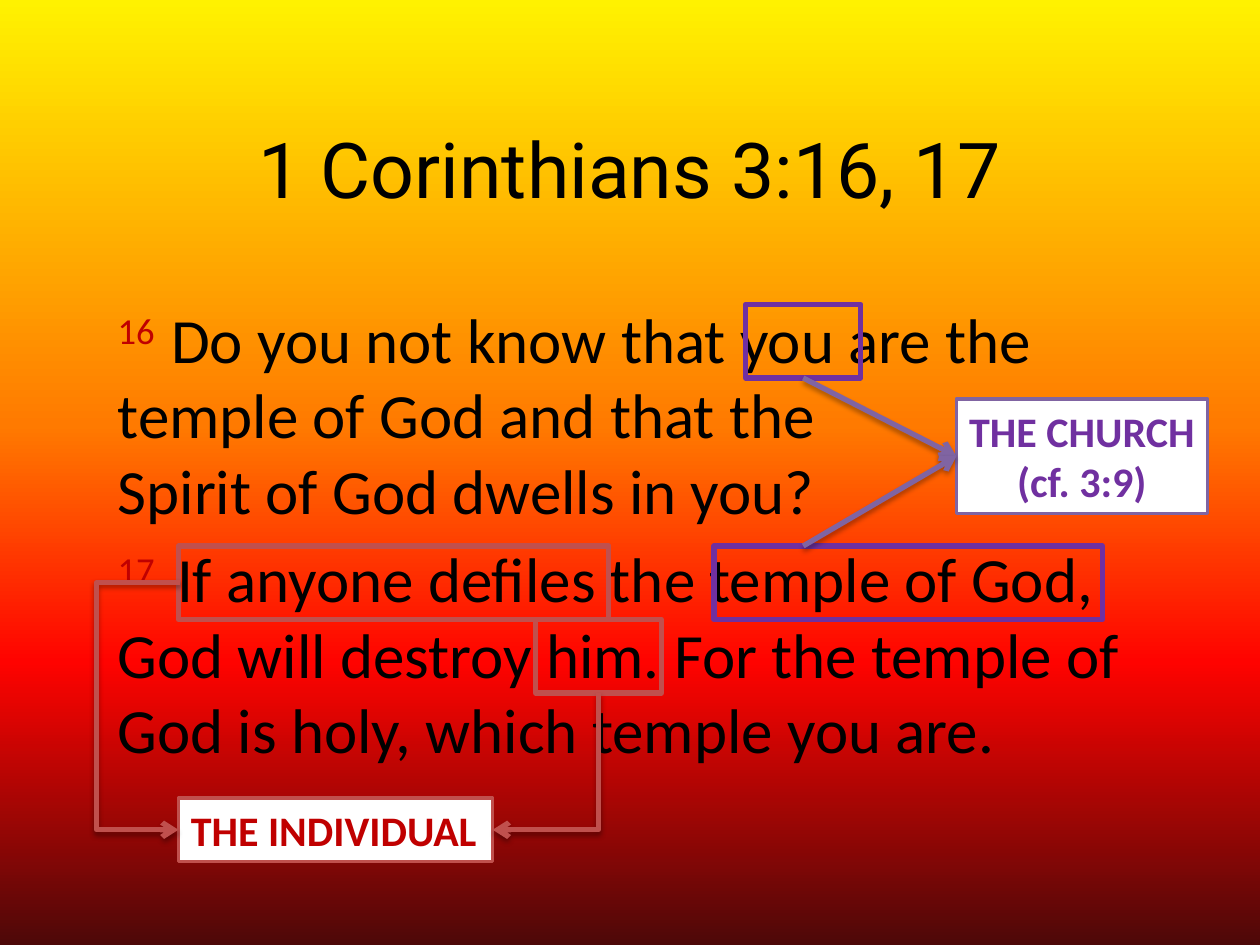
from lxml import etree
from pptx import Presentation
from pptx.dml.color import RGBColor
from pptx.enum.shapes import MSO_CONNECTOR as LINK, MSO_SHAPE
from pptx.enum.text import MSO_ANCHOR, MSO_AUTO_SIZE, PP_ALIGN
from pptx.oxml import parse_xml
from pptx.oxml.ns import nsdecls, qn
from pptx.util import Pt

BLACK = RGBColor(0x00, 0x00, 0x00)
WHITE = RGBColor(0xFF, 0xFF, 0xFF)
RED = RGBColor(0xC0, 0x00, 0x00)
BRICK = RGBColor(0xC0, 0x50, 0x4D)
PURPLE = RGBColor(0x70, 0x30, 0xA0)
LILAC = RGBColor(0x80, 0x64, 0xA2)
SKY = [(0, RGBColor(0xFF, 0xF2, 0x00)), (45, RGBColor(0xFF, 0x7A, 0x00)),
       (70, RGBColor(0xFF, 0x03, 0x00)), (100, RGBColor(0x4D, 0x08, 0x08))]

REFERENCE = "1 Corinthians 3:16, 17"
VERSES = [
    ("16  ", "Do you not know that you are the temple of God and that the \n"
             "Spirit of God dwells in you?"),
    ("17 ", " If anyone defiles the temple of God, God will destroy him. "
            "For the temple of God is holy, which temple you are."),
]
HIGHLIGHTS = {
    "you": (426, 174, 66, 42, PURPLE),
    "anyone": (102, 312, 246, 42, BRICK),
    "temple": (408, 312, 222, 42, PURPLE),
    "him": (306, 354, 72, 42, BRICK),
}
MEANINGS = {
    "church": ("THE CHURCH\n(cf. 3:9)", (546.5, 228, 143.5, 65.5), LILAC, PURPLE, PP_ALIGN.CENTER),
    "individual": ("THE INDIVIDUAL", (102, 456, 179.5, 36.3), BRICK, RED, PP_ALIGN.LEFT),
}
DETOUR_X = 54.7


def set_font(font, **values):
    color = values.pop("color")
    for name, value in values.items():
        setattr(font, name, value)
    font.color.rgb = color


def add_box(slide, left, top, width, height, color, weight):
    box = slide.shapes.add_shape(MSO_SHAPE.RECTANGLE, Pt(left), Pt(top), Pt(width), Pt(height))
    box.shadow.inherit = False
    box.fill.background()
    box.line.color.rgb = color
    box.line.width = Pt(weight)
    return box


def add_arrow(slide, kind, start, end, color):
    arrow = slide.shapes.add_connector(kind, *(Pt(value) for value in (*start, *end)))
    arrow.line.color.rgb = color
    arrow.line.width = Pt(3)
    etree.SubElement(arrow.line._get_or_add_ln(), qn("a:tailEnd"), type="arrow")
    arrow._element.spPr.append(parse_xml(
        f'<a:effectLst {nsdecls("a")}><a:outerShdw blurRad="{Pt(3.1)}" dist="{Pt(1.8)}" '
        'dir="5400000" rotWithShape="0"><a:srgbClr val="000000"><a:alpha val="35000"/>'
        '</a:srgbClr></a:outerShdw></a:effectLst>'))
    return arrow


def paint_background(slide):
    fill = slide.background.fill
    fill.gradient()
    gradient = slide.background._cSld.find(".//" + qn("a:gradFill"))
    stops = "".join(f'<a:gs pos="{pos * 1000}"><a:srgbClr val="{color}"/></a:gs>'
                    for pos, color in SKY)
    gradient.replace(gradient.find(qn("a:gsLst")),
                     parse_xml(f'<a:gsLst {nsdecls("a")}>{stops}</a:gsLst>'))
    gradient.find(qn("a:lin")).set("ang", "5400000")


def place(holder, left, top, width, height):
    holder.left, holder.top, holder.width, holder.height = map(Pt, (left, top, width, height))
    holder.text_frame.auto_size = MSO_AUTO_SIZE.NONE
    holder.text_frame.word_wrap = True


def write_verses(frame):
    for index, (number, words) in enumerate(VERSES):
        verse = frame.add_paragraph() if index else frame.paragraphs[0]
        props = verse._p.get_or_add_pPr()
        props.set("marL", "0")
        props.set("indent", "0")
        etree.SubElement(props, qn("a:buNone"))
        verse.space_before = Pt(7.2 if index else 0)
        mark = verse.add_run()
        mark.text = number
        set_font(mark.font, name="Calibri", size=Pt(36), color=RED)
        mark._r.get_or_add_rPr().set("baseline", "30000")
        for row, line in enumerate(words.split("\n")):
            if row:
                verse.add_line_break()
            run = verse.add_run()
            run.text = line
            set_font(run.font, name="Calibri", size=Pt(36), color=BLACK)


def add_meaning(slide, words, area, edge, ink, align):
    box = add_box(slide, *area, edge, 2)
    box.fill.solid()
    box.fill.fore_color.rgb = WHITE
    frame = box.text_frame
    frame.word_wrap = False
    frame.auto_size = MSO_AUTO_SIZE.SHAPE_TO_FIT_TEXT
    frame.vertical_anchor = MSO_ANCHOR.TOP
    label = frame.paragraphs[0]
    label.text = words
    label.alignment = align
    for run in label.runs:
        set_font(run.font, name="Calibri", size=Pt(24), bold=True, color=ink)
    return box


def add_church_arrows(slide, boxes):
    left, top, width, height = MEANINGS["church"][1]
    target = (left, top + height / 2)
    x, y, w, h, _ = HIGHLIGHTS["you"]
    middle = x + w / 2
    for start, source in [((middle, y + h), boxes["you"]),
                          ((middle, HIGHLIGHTS["temple"][1]), None)]:
        arrow = add_arrow(slide, LINK.STRAIGHT, start, target, LILAC)
        if source is not None:
            arrow.begin_connect(source, 2)
        arrow.end_connect(boxes["church"], 1)


def add_individual_arrows(slide):
    left, top, width, height = MEANINGS["individual"][1]
    end_y = top + height / 2
    x, y, w, h, _ = HIGHLIGHTS["anyone"]
    around = add_arrow(slide, LINK.ELBOW, (x + 1, y + h / 2), (left, end_y), BRICK)
    guides = around._element.spPr.find(qn("a:prstGeom")).get_or_add_avLst()
    bend = round((x + 1 - DETOUR_X) / (x + 1 - left) * 100000)
    etree.SubElement(guides, qn("a:gd"), name="adj1", fmla=f"val {bend}")

    x, y, w, h, _ = HIGHLIGHTS["him"]
    start_x, start_y, end_x = x + w / 2, y + h, left + width
    drop, run = end_y - start_y, start_x - end_x
    turn_x = (start_x + end_x - drop) / 2
    turn_y = (start_y + end_y - run) / 2
    down = add_arrow(slide, LINK.ELBOW, (turn_x, turn_y), (turn_x + drop, turn_y + run), BRICK)
    down._element.spPr.find(qn("a:prstGeom")).set("prst", "bentConnector2")
    down._element.spPr.find(qn("a:xfrm")).set("rot", "5400000")


def main():
    deck = Presentation()
    deck.slide_width, deck.slide_height = Pt(720), Pt(540)
    slide = deck.slides.add_slide(deck.slide_layouts[1])
    paint_background(slide)

    title, body = slide.placeholders
    place(title, 36, 54, 648, 84)
    title.text_frame.vertical_anchor = MSO_ANCHOR.MIDDLE
    heading = title.text_frame.paragraphs[0]
    heading.text = REFERENCE
    heading.alignment = PP_ALIGN.CENTER
    set_font(heading.runs[0].font, name="Roboto", size=Pt(44), color=BLACK)

    place(body, 60, 168, 624, 314.5)
    write_verses(body.text_frame)

    boxes = {word: add_box(slide, *area, 3) for word, area in HIGHLIGHTS.items()}
    boxes |= {name: add_meaning(slide, *meaning) for name, meaning in MEANINGS.items()}
    add_church_arrows(slide, boxes)
    add_individual_arrows(slide)
    deck.save("out.pptx")


if __name__ == "__main__":
    main()
